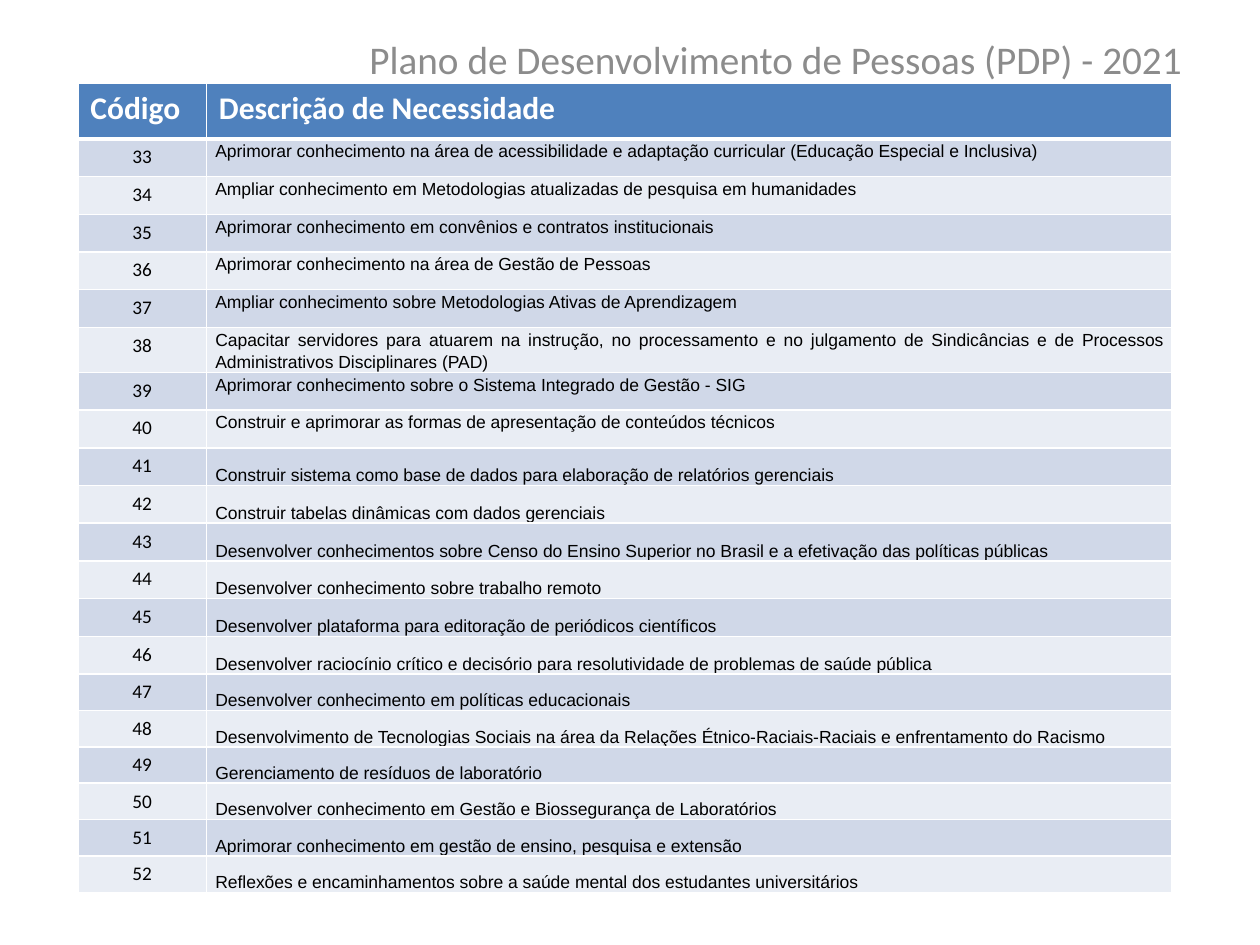
from lxml import etree
from pptx import Presentation
from pptx.dml.color import RGBColor
from pptx.enum.text import MSO_ANCHOR, MSO_AUTO_SIZE, PP_ALIGN
from pptx.oxml.ns import qn
from pptx.util import Cm, Pt

CENTER, JUSTIFY, LEFT = PP_ALIGN.CENTER, PP_ALIGN.JUSTIFY, PP_ALIGN.LEFT
TOP, BOTTOM = MSO_ANCHOR.TOP, MSO_ANCHOR.BOTTOM
NO_AUTOFIT = MSO_AUTO_SIZE.NONE

HEADER_FILL = "4F81BD"
BAND_FILLS = ["D0D8E8", "E9EDF4"]
FIRST_CODE = 33
FIRST_BOTTOM_CODE = 41
FIRST_SHORT_CODE = 47
TWO_LINE_CODE = 38

NEEDS = [
    "Aprimorar conhecimento na área de acessibilidade e adaptação curricular (Educação Especial e Inclusiva)",
    "Ampliar conhecimento em Metodologias atualizadas de pesquisa em humanidades",
    "Aprimorar conhecimento em convênios e contratos institucionais",
    "Aprimorar conhecimento na área de Gestão de Pessoas",
    "Ampliar conhecimento sobre Metodologias Ativas de Aprendizagem",
    "Capacitar servidores para atuarem na instrução, no processamento e no julgamento de Sindicâncias "
    "e de Processos Administrativos Disciplinares (PAD)",
    "Aprimorar conhecimento sobre o Sistema Integrado de Gestão - SIG",
    "Construir e aprimorar as formas de apresentação de conteúdos técnicos",
    "Construir sistema como base de dados para elaboração de relatórios gerenciais",
    "Construir tabelas dinâmicas com dados gerenciais",
    "Desenvolver conhecimentos sobre Censo do Ensino Superior no Brasil e a efetivação das políticas públicas",
    "Desenvolver conhecimento sobre trabalho remoto",
    "Desenvolver plataforma para editoração de periódicos científicos",
    "Desenvolver raciocínio crítico e decisório para resolutividade de problemas de saúde pública",
    "Desenvolver conhecimento em políticas educacionais",
    "Desenvolvimento de Tecnologias Sociais na área da Relações Étnico-Raciais-Raciais e enfrentamento do Racismo",
    "Gerenciamento de resíduos de laboratório",
    "Desenvolver conhecimento em Gestão e Biossegurança de Laboratórios",
    "Aprimorar conhecimento em gestão de ensino, pesquisa e extensão",
    "Reflexões e encaminhamentos sobre a saúde mental dos estudantes universitários",
]


def write(tf, text, size, font, color, align, bold=False):
    """Add one formatted run to the first paragraph and return the paragraph."""
    p = tf.paragraphs[0]
    p.alignment = align
    r = p.add_run()
    r.text = text
    r.font.size = Pt(size)
    r.font.name = font
    r.font.bold = bold
    r.font.color.rgb = RGBColor.from_string(color)
    return p


def style_cell(cell, fill, top=1, bottom=1):
    """Give the cell white borders (widths in points) and a solid fill."""
    tc_pr = cell._tc.get_or_add_tcPr()
    for tag, width in (("lnL", 1), ("lnR", 1), ("lnT", top), ("lnB", bottom)):
        ln = etree.SubElement(tc_pr, qn(f"a:{tag}"), w=str(Pt(width)))
        solid = etree.SubElement(ln, qn("a:solidFill"))
        etree.SubElement(solid, qn("a:srgbClr"), val="FFFFFF")
    cell.fill.solid()
    cell.fill.fore_color.rgb = RGBColor.from_string(fill)


prs = Presentation()
prs.slide_width, prs.slide_height = Cm(25.4), Cm(19.05)
s = prs.slides.add_slide(prs.slide_layouts[5])

# Title
title = s.shapes.title
title.left, title.top, title.width, title.height = Cm(6.76), Cm(0.58), Cm(17.78), Cm(1.9)
tf = title.text_frame
tf.word_wrap = True
tf.auto_size = NO_AUTOFIT
tf.vertical_anchor = TOP
p = write(tf, "Plano de Desenvolvimento de Pessoas (PDP) - 2021", 22.4, "Calibri", "8C8C8C", CENTER)
p.space_before = Pt(2)

# Table
frame = s.shapes.add_table(len(NEEDS) + 1, 2, Cm(1.57), Cm(1.68), Cm(22.05), Cm(15.85))
table = frame.table
table.horz_banding = False
table.columns[0].width, table.columns[1].width = Cm(2.59), Cm(19.46)

table.rows[0].height = Cm(1.12)
for col, heading in enumerate(["Código", "Descrição de Necessidade"]):
    cell = table.cell(0, col)
    style_cell(cell, HEADER_FILL, bottom=3)
    write(cell.text_frame, heading, 18, "Calibri", "FFFFFF", LEFT, bold=True)

for row, need in enumerate(NEEDS, start=1):
    code = FIRST_CODE + row - 1
    if code == TWO_LINE_CODE:
        height = 0.86
    else:
        height = 0.66 if code >= FIRST_SHORT_CODE else 0.76
    table.rows[row].height = Cm(height)

    code_cell, need_cell = table.cell(row, 0), table.cell(row, 1)
    for cell in (code_cell, need_cell):
        style_cell(cell, BAND_FILLS[(row - 1) % 2], top=3 if row == 1 else 1)
    write(code_cell.text_frame, str(code), 11, "Calibri", "000000", CENTER)

    need_cell.margin_left = need_cell.margin_right = Cm(0.18)
    need_cell.margin_top = need_cell.margin_bottom = Cm(0)
    need_cell.vertical_anchor = BOTTOM if code >= FIRST_BOTTOM_CODE else TOP
    p = write(need_cell.text_frame, need, 10, "Arial", "000000", JUSTIFY)
    p.line_spacing = 1.15

prs.save("out.pptx")
